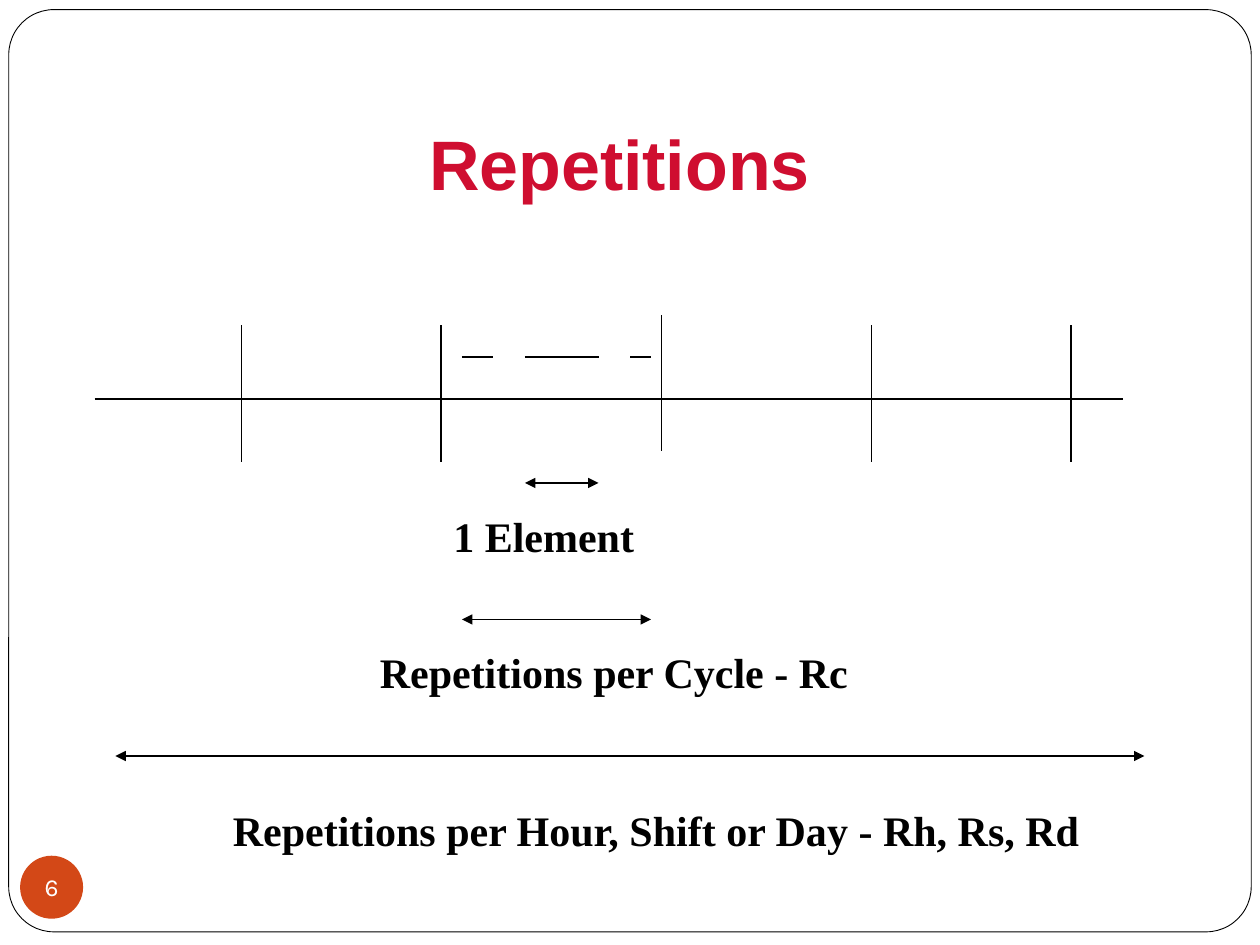
from lxml import etree
from pptx import Presentation
from pptx import util as u
from pptx.dml.color import RGBColor
from pptx.enum import shapes, text
from pptx.oxml.ns import qn

# Content, all lengths in points
COLORS = {"paper": "FFFFFF", "ink": "000000", "title": "CF0E30", "badge": "D34817"}
TITLE = "Repetitions"
PAGE_NUMBER = "6"
AXIS = (54, 642, 228)  # left, right, y
TICKS = [(138, 186), (252, 186), (378, 180), (498, 186), (612, 186)]  # x, top
TICK_HEIGHT = 78
ELEMENTS = [(264, 282), (300, 342), (360, 372)]  # left, right
ELEMENT_Y = 204
SPANS = [  # arrow left, right, y; label, its left, top, width
    (300, 342, 276, "1 Element", 252, 288, 127),
    (264, 372, 354, "Repetitions per Cycle - Rc", 210, 366, 307),
    (66, 654, 432, "Repetitions per Hour, Shift or Day - Rh, Rs, Rd", 126, 456, 541),
]
CENTER = text.PP_ALIGN.CENTER
MIDDLE = text.MSO_ANCHOR.MIDDLE


def color(name):
    return RGBColor.from_string(COLORS[name])


def points(*values):
    return [u.Pt(value) for value in values]


def write(shape, words, ink, font, frame=None, para=None):
    box = shape.text_frame
    box.text = words
    first = box.paragraphs[0]
    for target, values in ((box, frame), (first, para), (first.runs[0].font, font)):
        for name, value in (values or {}).items():
            setattr(target, name, value)
    first.runs[0].font.color.rgb = color(ink)


def add_line(page, left, top, right, bottom, arrows=False):
    line = page.shapes.add_connector(
        shapes.MSO_CONNECTOR.STRAIGHT, *points(left, top, right, bottom))
    line.line.color.rgb = color("ink")
    line.line.width = u.Pt(1)
    if arrows:
        stroke = line.line._get_or_add_ln()
        for end in ("a:headEnd", "a:tailEnd"):
            etree.SubElement(stroke, qn(end), type="triangle")
    etree.SubElement(line._element.spPr, qn("a:effectLst"))


def add_shape(page, kind, place, fill):
    shape = page.shapes.add_shape(kind, *points(*place))
    shape.shadow.inherit = False
    shape.fill.solid()
    shape.fill.fore_color.rgb = color(fill)
    return shape


def main():
    deck = Presentation()
    deck.slide_width, deck.slide_height = points(720, 540)
    page = deck.slides.add_slide(deck.slide_layouts[5])

    # Rounded frame, behind the title
    frame = add_shape(page, shapes.MSO_SHAPE.ROUNDED_RECTANGLE, (5, 5.5, 710, 527), "paper")
    frame.adjustments[0] = 0.049
    frame.line.color.rgb = color("ink")
    frame.line.width = u.Pt(0.5)
    title = page.shapes.title
    title._element.addprevious(frame._element)

    # Title
    title.left, title.top, title.width, title.height = points(48, 48, 612, 90)
    write(title, TITLE, "title", {"name": "Arial", "size": u.Pt(40), "bold": True},
          {"vertical_anchor": MIDDLE}, {"alignment": CENTER})

    # Time axis, cycle ticks and the elements of one cycle
    left, right, y = AXIS
    add_line(page, left, y, right, y)
    for x, top in TICKS:
        add_line(page, x, top, x, top + TICK_HEIGHT)
    for left, right in ELEMENTS:
        add_line(page, left, ELEMENT_Y, right, ELEMENT_Y)

    # Span arrows with their labels
    for left, right, y, words, label_left, top, width in SPANS:
        add_line(page, left, y, right, y, arrows=True)
        label = page.shapes.add_textbox(*points(label_left, top, width, 36))
        write(label, words, "ink",
              {"name": "Times New Roman", "size": u.Pt(24), "bold": True},
              {"word_wrap": True}, {"space_before": u.Pt(3)})

    # Page number badge
    badge = add_shape(page, shapes.MSO_SHAPE.OVAL, (11.5, 489, 36, 36), "badge")
    badge.line.fill.background()
    margins = {f"margin_{side}": 0 for side in ("left", "top", "right", "bottom")}
    write(badge, PAGE_NUMBER, "paper", {"name": "Karla", "size": u.Pt(14)},
          {"vertical_anchor": MIDDLE, "word_wrap": False, **margins},
          {"alignment": CENTER})

    deck.save("out.pptx")


if __name__ == "__main__":
    main()
